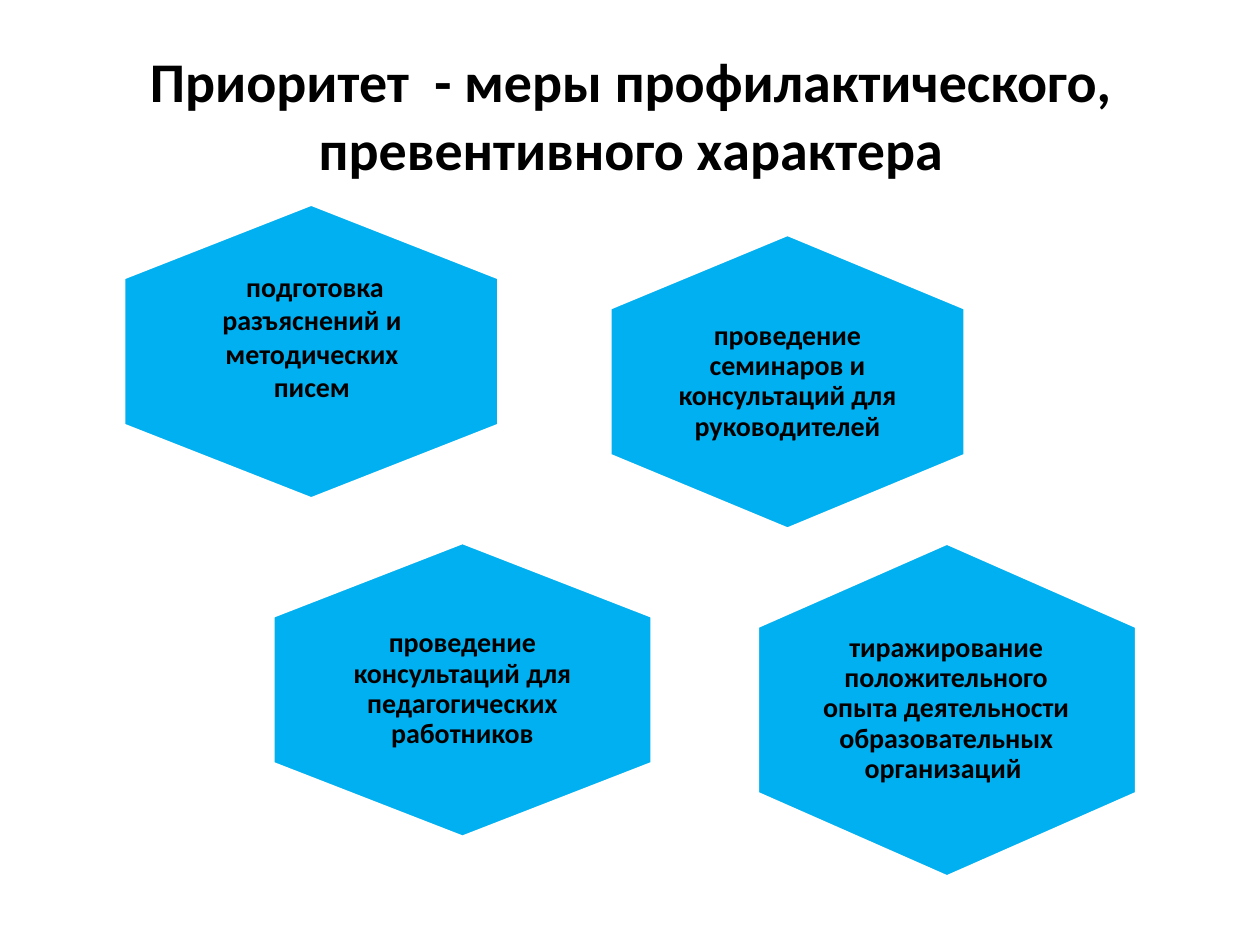
from pptx import Presentation
from pptx.dml.color import RGBColor
from pptx.enum.shapes import MSO_SHAPE
from pptx.enum.text import MSO_ANCHOR, PP_ALIGN
from pptx.util import Inches, Pt

BLUE = RGBColor(0x00, 0xB0, 0xF0)
WHITE = RGBColor(0xFF, 0xFF, 0xFF)
BLACK = RGBColor(0x00, 0x00, 0x00)


class SlideBuilder:
    font_name = "Calibri"

    def __init__(self, slide):
        self.slide = slide

    def hexagon(self, left, top, width, height):
        """Draw a hexagon turned upright; the frame is given before the turn."""
        shape = self.slide.shapes.add_shape(
            MSO_SHAPE.HEXAGON, Inches(left), Inches(top), Inches(width), Inches(height))
        shape.rotation = 90
        shape.adjustments[0] = 0.25
        shape.shadow.inherit = False
        shape.fill.solid()
        shape.fill.fore_color.rgb = BLUE
        shape.line.color.rgb = WHITE
        shape.line.width = Pt(2)

    def text(self, frame, words, size, insets, line_spacing=1.0):
        """Add centred bold text; insets are (sides, top, bottom)."""
        box = self.slide.shapes.add_textbox(*(Inches(length) for length in frame))
        text_frame = box.text_frame
        text_frame.word_wrap = True
        text_frame.vertical_anchor = MSO_ANCHOR.MIDDLE
        sides, top, bottom = insets
        text_frame.margin_left = text_frame.margin_right = Inches(sides)
        text_frame.margin_top = Inches(top)
        text_frame.margin_bottom = Inches(bottom)
        para = text_frame.paragraphs[0]
        para.text = words
        para.alignment = PP_ALIGN.CENTER
        para.line_spacing = line_spacing
        para.font.name = self.font_name
        para.font.size = Pt(size)
        para.font.bold = True
        para.font.color.rgb = BLACK


# Hexagon frame, text frame, words, insets, line spacing
MEASURES = [
    ((1.3, 1.3, 2.34, 2.98), (1.48, 2.01, 1.99, 1.56),
     " подготовка разъяснений и методических писем", (0.06, 0.06, 0.3), 1.0),
    ((2.5, 3.97, 2.34, 3.01), (2.67, 4.69, 2, 1.56),
     "проведение консультаций для педагогических работников", (0, 0, 0), 0.9),
    ((5.08, 1.62, 2.34, 2.82), (5.31, 2.25, 1.88, 1.56),
     "проведение семинаров и консультаций для руководителей", (0.07, 0.07, 0.07), 0.9),
    ((6.19, 4.13, 2.65, 3.01), (6.51, 4.74, 2, 1.77),
     "тиражирование положительного опыта деятельности образовательных организаций ",
     (0, 0, 0), 0.9),
]


def main():
    deck = Presentation()
    deck.slide_width = Inches(10)
    deck.slide_height = Inches(7.5)
    builder = SlideBuilder(deck.slides.add_slide(deck.slide_layouts[6]))

    # Measures in hexagons
    for hexagon_frame, text_frame, words, insets, line_spacing in MEASURES:
        builder.hexagon(*hexagon_frame)
        builder.text(text_frame, words, 16, insets, line_spacing)

    # Title, raised by its bottom inset
    builder.text((0.51, 0.52, 9, 1.25),
                 "Приоритет  - меры профилактического, превентивного характера",
                 32, (0.1, 0.05, 0.53))

    deck.save("out.pptx")


if __name__ == "__main__":
    main()
